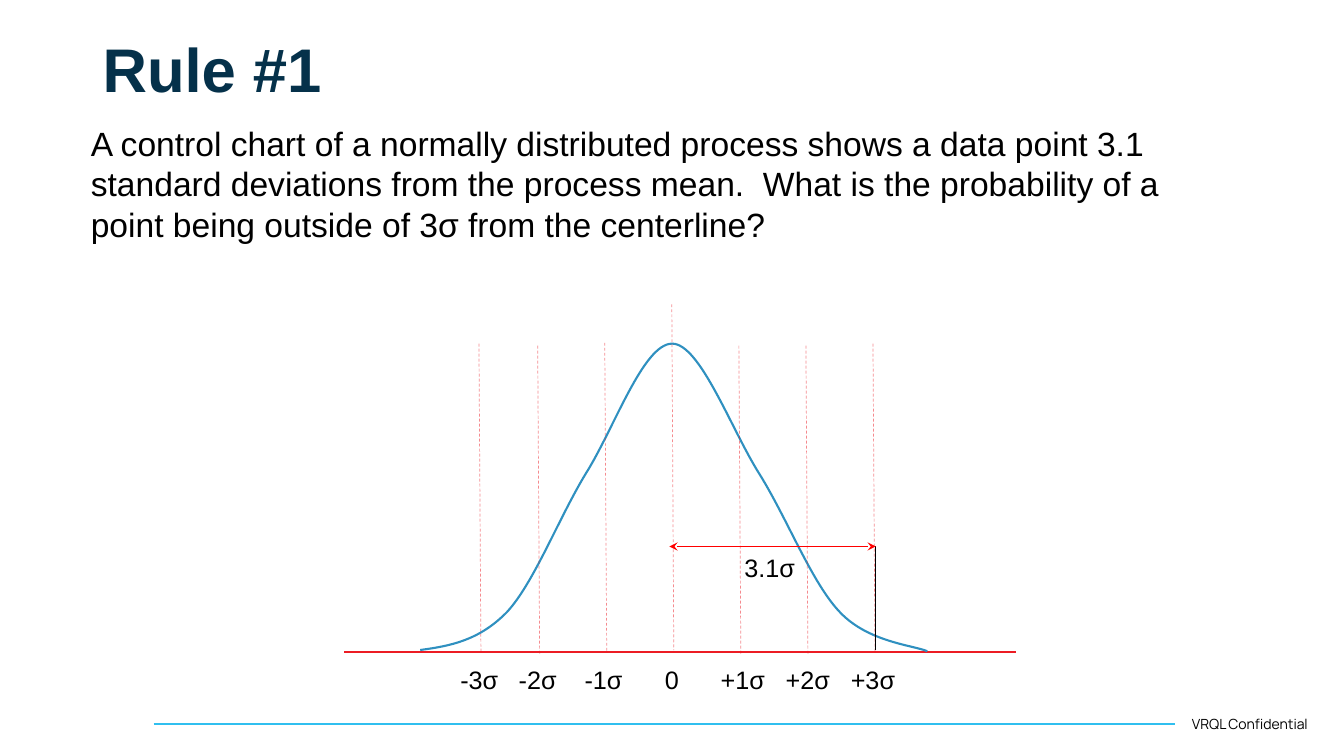
from dataclasses import dataclass

from lxml import etree
from pptx import Presentation
from pptx import util as u
from pptx.dml import color as dml_color
from pptx.enum import dml, shapes, text
from pptx.oxml import ns
from pptx.util import Cm


@dataclass(frozen=True)
class Theme:
    font: str = "Arial"
    footer_font: str = "Manrope"
    navy: str = "05314A"
    black: str = "000000"
    curve: str = "2F90C0"
    axis: str = "EC1C24"
    sigma: str = "EC161F"
    span: str = "FF0000"
    rule: str = "30BFEF"
    title_size: int = 44
    body_size: int = 24
    label_size: int = 18
    footer_size: int = 10


THEME = Theme()
MEAN_X = 16.93
SIGMA_WIDTH = 1.69
SIGMA_LEAN = 0.05
SIGMA_LINES = [
    (12.07, 8.66, 16.43),
    (MEAN_X - 2 * SIGMA_WIDTH, 8.71, 16.51),
    (MEAN_X - SIGMA_WIDTH, 8.64, 16.41),
    (MEAN_X, 7.67, 16.38),
    (MEAN_X + SIGMA_WIDTH, 8.71, 16.48),
    (MEAN_X + 2 * SIGMA_WIDTH, 8.71, 16.48),
    (MEAN_X + 3 * SIGMA_WIDTH, 8.66, 16.43),
]
SIGMA_LABELS = ["-3σ", "-2σ", "-1σ", "0", "+1σ", "+2σ", "+3σ"]
LABEL_CENTRES = [13.55, 15.21, 16.93, 18.72, 20.36, 22.0]
BELL_START = (10.59, 16.38)
BELL_SEGMENTS = [
    ((11.33, 16.28), (12.07, 16.15), (12.78, 15.42)),
    ((13.46, 14.68), (14.07, 13.08), (14.76, 11.94)),
    ((15.47, 10.82), (16.21, 8.66), (16.94, 8.66)),
    ((17.65, 8.66), (18.44, 10.85), (19.15, 11.96)),
    ((19.86, 13.11), (20.47, 14.71), (21.18, 15.44)),
    ((21.89, 16.18), (23.01, 16.26), (23.37, 16.41)),
]
QUESTION = (
    "A control chart of a normally distributed process shows a data point 3.1 "
    "standard deviations from the process mean.  What is the probability of a "
    "point being outside of 3σ from the centerline?"
)


def rgb(value):
    return dml_color.RGBColor.from_string(value)


def format_font(paragraph, size, color=THEME.black, name=THEME.font, bold=False):
    for run in paragraph.runs:
        run.font.size = u.Pt(size)
        run.font.name = name
        run.font.bold = bold
        run.font.color.rgb = rgb(color)


def add_title(slide, wording):
    title = slide.shapes.title
    title.left, title.top, title.width, title.height = Cm(2.33), Cm(0.71), Cm(29.21), Cm(2.24)
    title.text_frame.text = wording
    title.text_frame.vertical_anchor = text.MSO_ANCHOR.MIDDLE
    paragraph = title.text_frame.paragraphs[0]
    paragraph.alignment = text.PP_ALIGN.LEFT
    paragraph.line_spacing = 0.9
    format_font(paragraph, THEME.title_size, THEME.navy, bold=True)


def add_text(slide, wording, left, top, width, height, size, name=THEME.font, wrap=True):
    box = slide.shapes.add_textbox(Cm(left), Cm(top), Cm(width), Cm(height))
    box.text_frame.word_wrap = wrap
    box.text_frame.text = wording
    paragraph = box.text_frame.paragraphs[0]
    format_font(paragraph, size, name=name)
    return paragraph


def add_line(slide, start, end, color, width, dashed=False, arrows=False):
    points = [Cm(value) for value in (*start, *end)]
    line = slide.shapes.add_connector(shapes.MSO_CONNECTOR.STRAIGHT, *points)
    line.line.color.rgb = rgb(color)
    line.line.width = u.Pt(width)
    properties = line.element.spPr
    if dashed:
        line.line.dash_style = dml.MSO_LINE.DASH
        fill_color = properties.find(".//" + ns.qn("a:srgbClr"))
        etree.SubElement(fill_color, ns.qn("a:alpha"), val="50000")
    if arrows:
        outline = properties.find(ns.qn("a:ln"))
        for end_name in ("a:headEnd", "a:tailEnd"):
            etree.SubElement(outline, ns.qn(end_name), type="stealth")
    etree.SubElement(properties, ns.qn("a:effectLst"))


def add_bell_curve(slide):
    builder = slide.shapes.build_freeform(Cm(BELL_START[0]), Cm(BELL_START[1]))
    ends = [(Cm(x), Cm(y)) for _, _, (x, y) in BELL_SEGMENTS]
    builder.add_line_segments(ends, close=False)
    curve = builder.convert_to_shape()
    straight_parts = list(curve.element.iter(ns.qn("a:lnTo")))
    for straight, segment in zip(straight_parts, BELL_SEGMENTS):
        bend = etree.Element(ns.qn("a:cubicBezTo"))
        for x, y in segment:
            etree.SubElement(
                bend, ns.qn("a:pt"), x=str(Cm(x) - curve.left), y=str(Cm(y) - curve.top)
            )
        straight.getparent().replace(straight, bend)
    curve.shadow.inherit = False
    curve.fill.background()
    curve.line.color.rgb = rgb(THEME.curve)
    curve.line.width = u.Pt(1.5)


def add_sigma_labels(slide):
    left, inset = 11.35, 0.25
    paragraph = add_text(
        slide, "\t".join(SIGMA_LABELS), left, 16.61, 11.7, 1.02, THEME.label_size
    )
    tabs = etree.SubElement(paragraph._p.get_or_add_pPr(), ns.qn("a:tabLst"))
    for centre in LABEL_CENTRES:
        position = str(int(Cm(centre - left - inset)))
        etree.SubElement(tabs, ns.qn("a:tab"), pos=position, algn="ctr")


def add_distribution(slide):
    add_line(slide, (8.68, 16.43), (25.6, 16.43), THEME.axis, 1.5)
    add_bell_curve(slide)
    for x, top, bottom in SIGMA_LINES:
        add_line(slide, (x, top), (x + SIGMA_LEAN, bottom), THEME.sigma, 0.5, dashed=True)
    add_sigma_labels(slide)


def add_deviation(slide):
    point_x, span_y = 22.07, 13.77
    add_line(slide, (point_x, 16.38), (point_x, span_y), THEME.black, 1)
    add_line(slide, (point_x, span_y), (16.87, span_y), THEME.span, 1, arrows=True)
    add_text(slide, "3.1σ", 18.51, 13.79, 1.8, 1.02, THEME.label_size, wrap=False)


def add_footer(slide):
    add_line(slide, (3.87, 18.24), (29.6, 18.24), THEME.rule, 1.5)
    add_text(
        slide, "VRQL Confidential", 29.79, 17.91, 3.76, 0.69,
        THEME.footer_size, THEME.footer_font, wrap=False,
    )


def main():
    presentation = Presentation()
    presentation.slide_width, presentation.slide_height = Cm(33.87), Cm(19.05)
    slide = presentation.slides.add_slide(presentation.slide_layouts[5])
    add_footer(slide)
    add_title(slide, "Rule #1")
    add_text(slide, QUESTION, 2.04, 2.97, 29.21, 8.46, THEME.body_size)
    add_distribution(slide)
    add_deviation(slide)
    presentation.save("out.pptx")


if __name__ == "__main__":
    main()
